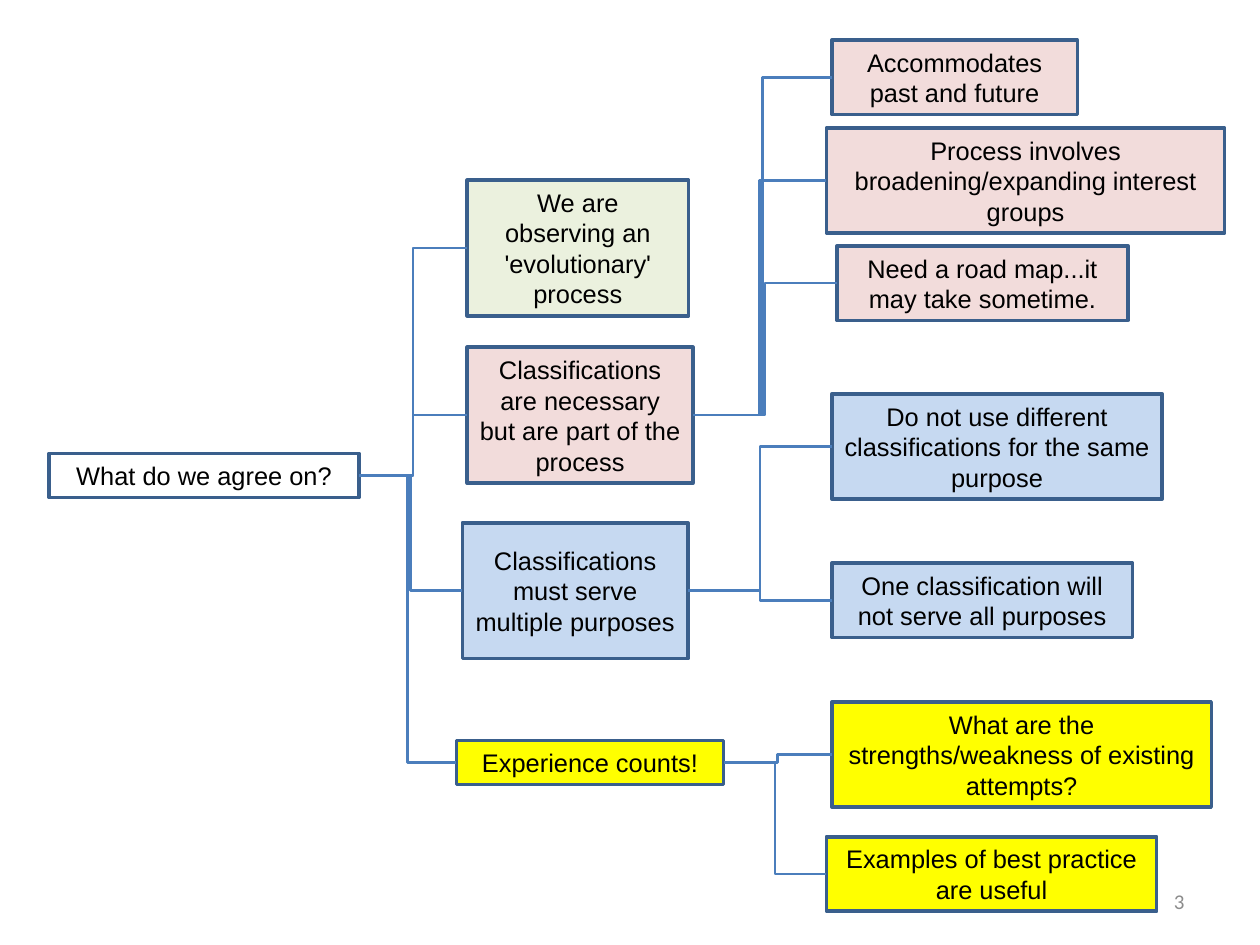
"""Build a one-slide decision tree of agreed points about classifications."""
from lxml import etree
from pptx import Presentation
from pptx.dml.color import RGBColor
from pptx.enum.shapes import MSO_CONNECTOR, MSO_SHAPE
from pptx.enum.text import MSO_ANCHOR, PP_ALIGN
from pptx.oxml.ns import qn
from pptx.util import Cm, Pt

RECTANGLE = MSO_SHAPE.RECTANGLE
ELBOW = MSO_CONNECTOR.ELBOW
MIDDLE = MSO_ANCHOR.MIDDLE
CENTER, RIGHT = PP_ALIGN.CENTER, PP_ALIGN.RIGHT
LEFT_SIDE, RIGHT_SIDE = 1, 3
WHITE, GREEN, PINK, BLUE, YELLOW = "FFFFFF", "EBF1DE", "F2DCDB", "C6D9F1", "FFFF00"
BORDER, BRANCH = "3A5F8C", "4B7EBC"


def color(value):
    return RGBColor.from_string(value)


def write(box, text, size=14.5, font="Arial", ink="000000", align=CENTER, wrap=True):
    frame = box.text_frame
    frame.word_wrap = wrap
    frame.vertical_anchor = MIDDLE
    frame.margin_left = frame.margin_right = Cm(0.25)
    para = frame.paragraphs[0]
    para.alignment = align
    span = para.add_run()
    span.text = text
    span.font.size = Pt(size)
    span.font.name = font
    span.font.color.rgb = color(ink)


deck = Presentation()
deck.slide_width, deck.slide_height = Cm(25.4), Cm(19.05)
page = deck.slides.add_slide(deck.slide_layouts[6])

number = page.shapes.add_textbox(Cm(18.2), Cm(17.66), Cm(5.93), Cm(1.01))
write(number, "3", size=12, font="Calibri", ink="8C8C8C", align=RIGHT)

# name, parent, fill, left, top, width, height, text
nodes = [
    ("root", None, WHITE, 0.99, 9.14, 6.25, 0.89, "What do we agree on?"),
    ("process", "root", GREEN, 9.42, 3.63, 4.46, 2.74,
     "We are observing an 'evolutionary' process"),
    ("necessary", "root", PINK, 9.42, 7, 4.55, 2.74,
     "Classifications are necessary but are part of the process"),
    ("past", "necessary", PINK, 16.77, 0.81, 4.95, 1.5, "Accommodates past and future"),
    ("groups", "necessary", PINK, 16.66, 2.58, 8.03, 2.12,
     "Process involves broadening/expanding interest groups"),
    ("map", "necessary", PINK, 16.87, 4.96, 5.87, 1.5,
     "Need a road map...it may take sometime."),
    ("purposes", "root", BLUE, 9.32, 10.54, 4.55, 2.74,
     "Classifications must serve multiple purposes"),
    ("same", "purposes", BLUE, 16.77, 7.94, 6.66, 2.12,
     "Do not use different classifications for the same purpose"),
    ("single", "purposes", BLUE, 16.77, 11.35, 6.06, 1.5,
     "One classification will not serve all purposes"),
    ("experience", "root", YELLOW, 9.2, 14.93, 5.39, 0.89, "Experience counts!"),
    ("strengths", "experience", YELLOW, 16.77, 14.15, 7.65, 2.12,
     "What are the strengths/weakness of existing attempts?"),
    ("practice", "experience", YELLOW, 16.66, 16.87, 6.66, 1.5,
     "Examples of best practice are useful"),
]

boxes = {}
for name, parent, fill, left, top, width, height, text in nodes:
    box = page.shapes.add_shape(RECTANGLE, Cm(left), Cm(top), Cm(width), Cm(height))
    box.shadow.inherit = False
    box.fill.solid()
    box.fill.fore_color.rgb = color(fill)
    box.line.color.rgb = color(BORDER)
    box.line.width = Pt(2)
    write(box, text, wrap=height > 1)
    boxes[name] = box

for name, parent, *rest in nodes:
    if parent:
        branch = page.shapes.add_connector(ELBOW, 0, 0, 0, 0)
        branch.begin_connect(boxes[parent], RIGHT_SIDE)
        branch.end_connect(boxes[name], LEFT_SIDE)
        branch.line.color.rgb = color(BRANCH)
        branch.line.width = Pt(1.5)
        etree.SubElement(branch.element.spPr, qn("a:effectLst"))

deck.save("out.pptx")
